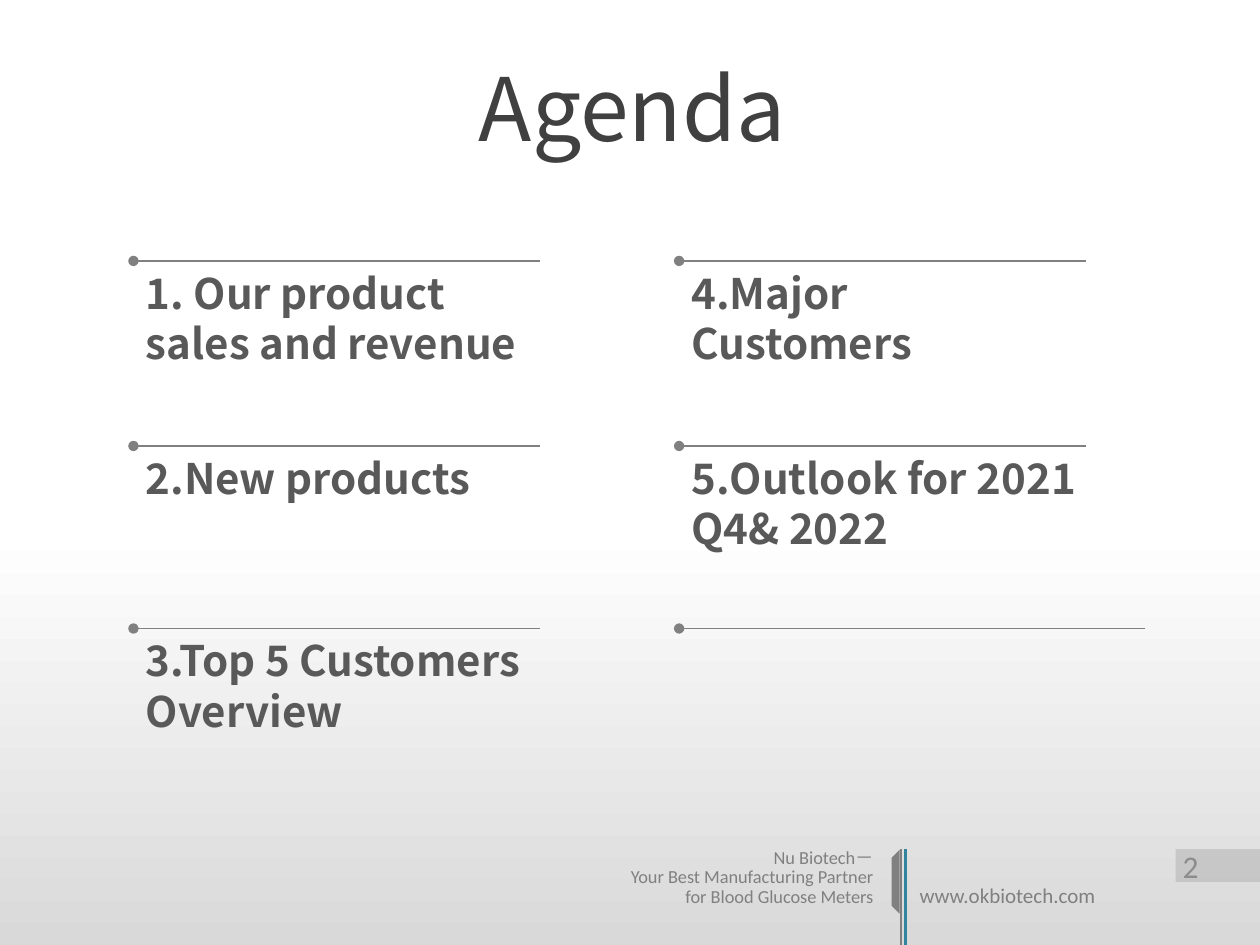
import pptx
import pptx.dml.color
import pptx.enum.shapes
import pptx.enum.text
import pptx.oxml
import pptx.oxml.ns
import pptx.util

Cm = pptx.util.Cm
Pt = pptx.util.Pt
ALIGN = pptx.enum.text.PP_ALIGN
ANCHOR = pptx.enum.text.MSO_ANCHOR
SHAPE = pptx.enum.shapes.MSO_SHAPE

COLOURS = {
    "white": "FFFFFF",
    "bottom": "D9D9D9",
    "grey": "808080",
    "teal": "31859C",
    "item": "595959",
    "title": "404040",
    "number": "8C8C8C",
}
HEADING_FONT = "Noto Sans CJK SC"
FOOTER_FONT = "Calibri"


def rgb(name):
    return pptx.dml.color.RGBColor.from_string(COLOURS[name])


def add_element(parent, tag, **attributes):
    element = pptx.oxml.parse_xml(f"<a:{tag} {pptx.oxml.ns.nsdecls('a')}/>")
    for key, value in attributes.items():
        element.set(key, value)
    parent.append(element)


class SlideBuilder:
    def __init__(self, slide):
        self.slide = slide

    def background(self):
        fill = self.slide.background.fill
        fill.gradient()
        fill.gradient_angle = 270
        for stop, position, colour in zip(
            fill.gradient_stops, (0.56, 1), ("white", "bottom")
        ):
            stop.position = position
            stop.color.rgb = rgb(colour)

    def add_lines(self, frame, lines, size, font, colour, bold=False,
                  align=ALIGN.LEFT, spacing=None):
        for index, line in enumerate(lines):
            paragraph = frame.add_paragraph() if index else frame.paragraphs[0]
            paragraph.alignment = align
            if spacing:
                paragraph.line_spacing = Pt(spacing)
            run = paragraph.add_run()
            run.text = line
            run.font.size = Pt(size)
            run.font.name = font
            run.font.bold = bold
            run.font.color.rgb = rgb(colour)
            add_element(run.font._element, "ea", typeface=font)

    def text(self, left, top, width, height, lines, size, font, colour,
             anchor=ANCHOR.TOP, **style):
        box = self.slide.shapes.add_textbox(
            Cm(left), Cm(top), Cm(width), Cm(height))
        frame = box.text_frame
        frame.word_wrap = True
        frame.vertical_anchor = anchor
        self.add_lines(frame, lines, size, font, colour, **style)

    def line(self, start, end, colour, width, dot=False):
        """Draw a line, with a round dot at its end if asked."""
        connector = self.slide.shapes.add_connector(
            pptx.enum.shapes.MSO_CONNECTOR.STRAIGHT,
            *(Cm(value) for value in start + end))
        connector.line.color.rgb = rgb(colour)
        connector.line.width = Pt(width)
        if dot:
            add_element(connector.line._get_or_add_ln(), "tailEnd", type="oval")
        add_element(connector._element.spPr, "effectLst")

    def shape(self, kind, left, top, width, height, colour):
        shape = self.slide.shapes.add_shape(
            kind, Cm(left), Cm(top), Cm(width), Cm(height))
        shape.shadow.inherit = False
        shape.fill.solid()
        shape.fill.fore_color.rgb = rgb(colour)
        shape.line.fill.background()
        return shape

    def stripe(self, left, top, size):
        stripe = self.shape(SHAPE.DIAGONAL_STRIPE, left, top, size, size, "grey")
        stripe.adjustments[0] = 0.75
        stripe.rotation = 225
        stripe._element.spPr.xfrm.set("flipH", "1")

    def page_number(self, left, top, width, height, number):
        badge = self.shape(SHAPE.RECTANGLE, left, top, width, height, "grey")
        colour = badge._element.spPr.find(".//" + pptx.oxml.ns.qn("a:srgbClr"))
        add_element(colour, "alpha", val="25000")
        frame = badge.text_frame
        frame.margin_left = Cm(0.14)
        frame.margin_top = frame.margin_right = frame.margin_bottom = 0
        frame.vertical_anchor = ANCHOR.MIDDLE
        self.add_lines(frame, [number], 18, FOOTER_FONT, "number")

    def agenda_item(self, left, top, rule_width, text, text_width):
        if text:
            self.text(left, top, text_width, 2.31, [text], 24, HEADING_FONT,
                      "item", bold=True)
        self.line((left + rule_width, top), (left, top), "grey", 1, dot=True)

    def footer(self):
        self.line((18.16, 17.12), (18.16, 19.05), "grey", 1.5)
        self.stripe(17.68, 17.32, 0.91)
        self.line((18.26, 17.12), (18.26, 19.05), "teal", 1.5)
        motto = ["Nu Biotech－", "Your Best Manufacturing Partner",
                 "for Blood Glucose Meters"]
        self.text(12.09, 16.99, 5.77, 1.42, motto, 10.5, FOOTER_FONT, "grey",
                  align=ALIGN.RIGHT, spacing=11)
        self.text(18.29, 17.78, 4.8, 0.66, ["www.okbiotech.com"], 12,
                  FOOTER_FONT, "grey", spacing=11)


def main():
    presentation = pptx.Presentation()
    presentation.slide_width = Cm(25.4)
    presentation.slide_height = Cm(19.05)
    builder = SlideBuilder(
        presentation.slides.add_slide(presentation.slide_layouts[6]))

    builder.background()
    builder.footer()
    builder.text(1.6, 0.56, 22.3, 3.18, ["Agenda"], 50, HEADING_FONT, "title",
                 anchor=ANCHOR.MIDDLE, align=ALIGN.CENTER)
    builder.page_number(23.7, 17.12, 1.7, 0.66, "2")

    row_tops = (5.26, 8.99, 12.67)
    columns = {
        2.69: [(8.2, "1. Our product sales and revenue", 8.79),
               (8.2, "2.New products", 7.8),
               (8.2, "3.Top 5 Customers Overview", 8.79)],
        13.69: [(8.2, "4.Major Customers", 7.8),
                (8.2, "5.Outlook for 2021 Q4& 2022", 9.98),
                (9.4, "", 0)],
    }
    for left, items in columns.items():
        for top, item in zip(row_tops, items):
            builder.agenda_item(left, top, *item)

    presentation.save("out.pptx")


if __name__ == "__main__":
    main()
